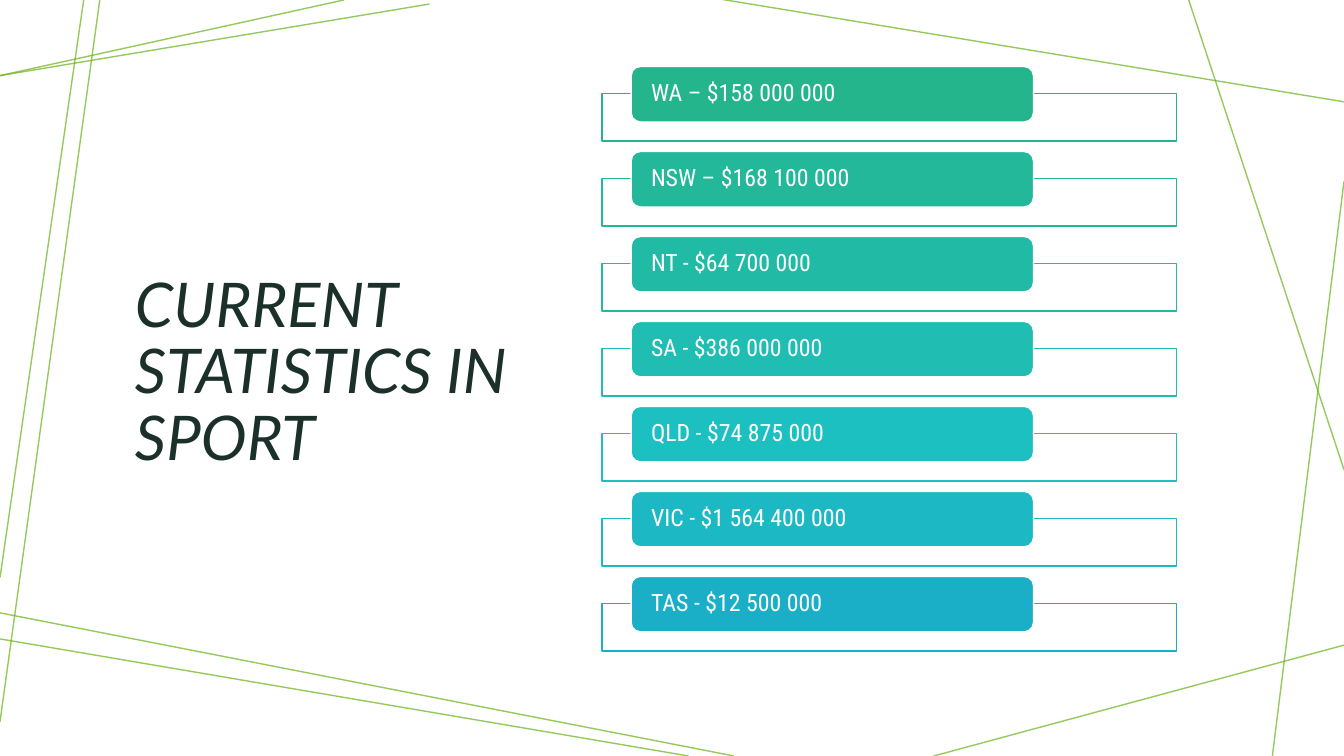
from lxml.etree import SubElement
from pptx import Presentation
from pptx.dml.color import RGBColor
from pptx.enum.shapes import MSO_CONNECTOR, MSO_SHAPE
from pptx.enum.text import MSO_ANCHOR, PP_ALIGN
from pptx.oxml.ns import qn
from pptx.util import Inches, Pt

WHITE = "FFFFFF"
LINE_GREEN = "6AB318"
TITLE_COLOR = "1B302B"
ROW_PITCH = 0.843

BACKGROUND_LINES = [
    (3.41, 0, 0, 0.75),
    (0.99, 0, 0, 7.16),
    (6.83, 7.5, -0.05, 6.33),
    (13.33, 6.4, 9.26, 7.5),
    (13.33, 1.8, 12.62, 7.5),
    (13.33, 4.66, 11.79, 0),
    (13.33, 1.01, 7.14, -0.01),
    (4.26, 0.04, 0, 0.75),
    (0, 5.73, 0.83, 0),
    (0, 6.08, 7.28, 7.5),
]

STATE_FUNDING = [
    ("WA – $158 000 000", "24B58D"),
    ("NSW – $168 100 000", "22B899"),
    ("NT - $64 700 000", "21BBA5"),
    ("SA - $386 000 000", "1FBDB2"),
    ("QLD - $74 875 000", "1DC0C0"),
    ("VIC - $1 564 400 000", "1CB8C3"),
    ("TAS - $12 500 000", "1AAFC6"),
]


def color(hex_string):
    return RGBColor.from_string(hex_string)


class SlideBuilder:
    """Draws the styled elements of one slide."""

    def __init__(self, slide):
        self.slide = slide

    def set_opacity(self, properties, percent):
        rgb = next(properties.iter(qn("a:srgbClr")))
        SubElement(rgb, qn("a:alpha"), val=str(percent * 1000))

    def line(self, left, top, right, bottom):
        connector = self.slide.shapes.add_connector(
            MSO_CONNECTOR.STRAIGHT,
            Inches(left), Inches(top), Inches(right), Inches(bottom),
        )
        connector.line.color.rgb = color(LINE_GREEN)
        connector.line.width = Pt(1)
        properties = connector.element.spPr
        self.set_opacity(properties, 70)
        SubElement(properties, qn("a:effectLst"))

    def box(self, preset, left, top, width, height, fill, outline):
        shape = self.slide.shapes.add_shape(
            preset, Inches(left), Inches(top), Inches(width), Inches(height)
        )
        shape.shadow.inherit = False
        shape.fill.solid()
        shape.fill.fore_color.rgb = color(fill)
        shape.line.color.rgb = color(outline)
        shape.line.width = Pt(1)
        return shape

    def text(self, shape, words, font_name, size, font_color, inset, italic=False):
        frame = shape.text_frame
        frame.word_wrap = True
        frame.vertical_anchor = MSO_ANCHOR.MIDDLE
        frame.margin_left = frame.margin_right = Inches(inset)
        frame.margin_top = frame.margin_bottom = 0
        paragraph = frame.paragraphs[0]
        paragraph.text = words
        paragraph.alignment = PP_ALIGN.LEFT
        paragraph.line_spacing = 0.9
        paragraph.font.name = font_name
        paragraph.font.size = Pt(size)
        paragraph.font.italic = italic
        paragraph.font.color.rgb = color(font_color)

    def title(self, words):
        box = self.slide.shapes.add_textbox(
            Inches(1.24), Inches(0.94), Inches(4.32), Inches(5.54)
        )
        self.text(box, words, "Lato", 44, TITLE_COLOR, 0.1, italic=True)

    def funding_row(self, top, words, accent):
        frame = self.box(
            MSO_SHAPE.RECTANGLE, 5.97, top + 0.27, 5.7, 0.47, WHITE, accent
        )
        self.set_opacity(frame.element.spPr, 90)
        label = self.box(
            MSO_SHAPE.ROUNDED_RECTANGLE, 6.26, top, 3.99, 0.55, accent, WHITE
        )
        self.text(label, words, "Roboto Condensed", 17, WHITE, 0.17)


def main():
    presentation = Presentation()
    presentation.slide_width = Inches(13.33)
    presentation.slide_height = Inches(7.5)
    builder = SlideBuilder(presentation.slides.add_slide(presentation.slide_layouts[6]))

    for ends in BACKGROUND_LINES:
        builder.line(*ends)
    builder.title("CURRENT STATISTICS IN SPORT")
    for index, (words, accent) in enumerate(STATE_FUNDING):
        builder.funding_row(0.66 + index * ROW_PITCH, words, accent)

    presentation.save("out.pptx")


if __name__ == "__main__":
    main()
